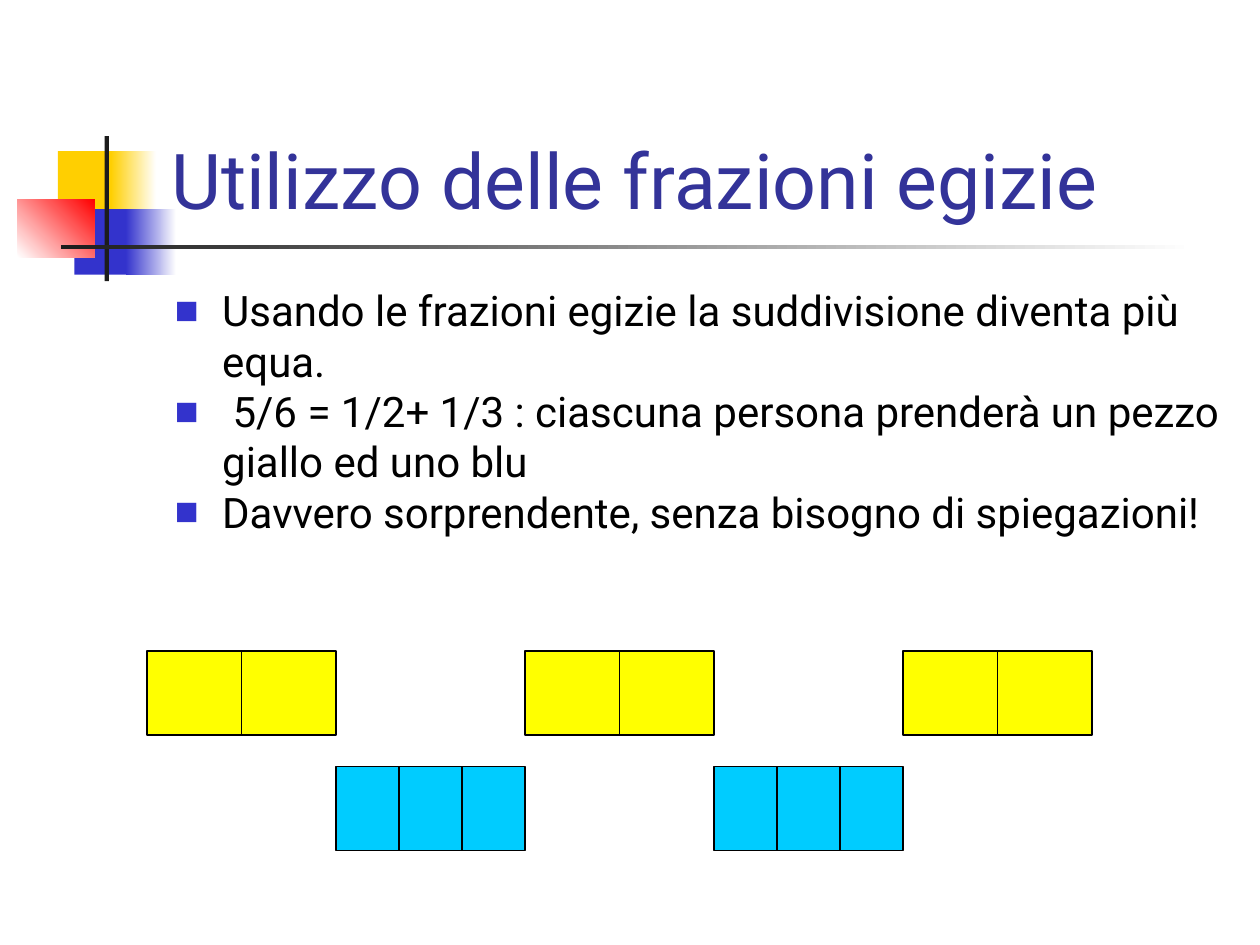
from lxml.etree import SubElement
from pptx import Presentation
from pptx.dml.color import RGBColor
from pptx.enum.shapes import MSO_CONNECTOR, MSO_SHAPE
from pptx.enum.text import MSO_ANCHOR
from pptx.oxml.ns import qn
from pptx.util import Pt

FONT = "Roboto"
COLORS = {
    "gold": "FFCF01", "blue": "3333CC", "red": "FF0000", "dark": "1C1C1C",
    "white": "FFFFFF", "black": "000000", "title": "333399",
    "yellow": "FFFF00", "cyan": "00CCFF",
}
BULLETS = [
    "Usando le frazioni egizie la suddivisione diventa più equa.",
    " 5/6 = 1/2+ 1/3 : ciascuna persona prenderà un pezzo giallo ed uno blu",
    "Davvero sorprendente, senza bisogno di spiegazioni!",
]
# Left, top, width, height, fill colours (two make a gradient), angle
DECORATION = [
    (33.1, 86.4, 34.6, 37.4, ["gold"], 0),
    (63.4, 86.4, 25.9, 37.4, ["gold", "white"], 0),
    (42.5, 119.5, 33.1, 37.4, ["blue"], 0),
    (72, 119.5, 28.8, 37.4, ["blue", "white"], 0),
    (10.1, 113.8, 43.9, 33.1, ["white", "red"], 45),
    (59.8, 77.8, 2.5, 82.8, ["dark"], 0),
    (34.6, 140.1, 648, 2.5, ["dark", "white"], 0),
]
BAR_W, BAR_H = 108, 48


def rgb(name):
    return RGBColor.from_string(COLORS[name])


def add_rect(s, x, y, w, h, fills, angle=0, line=None):
    sp = s.shapes.add_shape(MSO_SHAPE.RECTANGLE, Pt(x), Pt(y), Pt(w), Pt(h))
    sp.shadow.inherit = False
    if len(fills) == 1:
        sp.fill.solid()
        sp.fill.fore_color.rgb = rgb(fills[0])
    else:
        sp.fill.gradient()
        sp.fill.gradient_angle = angle
        for stop, name in zip(sp.fill.gradient_stops, fills):
            stop.color.rgb = rgb(name)
    if line:
        sp.line.color.rgb = rgb(line)
        sp.line.width = Pt(0.75)
    else:
        sp.line.fill.background()
    return sp


def add_text(s, x, y, w, h, lines, size, color, anchor=MSO_ANCHOR.TOP):
    tf = s.shapes.add_textbox(Pt(x), Pt(y), Pt(w), Pt(h)).text_frame
    tf.word_wrap = True
    tf.vertical_anchor = anchor
    tf.text = "\n".join(lines)
    for p in tf.paragraphs:
        font = p.runs[0].font
        font.name, font.size = FONT, Pt(size)
        font.color.rgb = rgb(color)
    return tf


def add_bullet(p):
    pPr = p._p.get_or_add_pPr()
    pPr.set("marL", str(Pt(27)))
    pPr.set("indent", str(-Pt(27)))
    clr = SubElement(pPr, qn("a:buClr"))
    SubElement(clr, qn("a:srgbClr"), val=COLORS["blue"])
    SubElement(pPr, qn("a:buSzPct"), val="60000")
    SubElement(pPr, qn("a:buFont"), typeface=FONT)
    SubElement(pPr, qn("a:buChar"), char="■")


def add_bar(s, x, y, parts, color):
    """Draw a bar cut into equal parts."""
    bar = add_rect(s, x, y, BAR_W, BAR_H, [color], line="black")
    for i in range(1, parts):
        cut = Pt(x + i * BAR_W / parts)
        cx = s.shapes.add_connector(MSO_CONNECTOR.STRAIGHT,
                                    cut, Pt(y), cut, Pt(y + BAR_H))
        if 2 * i == parts:
            cx.begin_connect(bar, 0)
            cx.end_connect(bar, 2)
        cx.line.color.rgb = rgb("black")
        cx.line.width = Pt(0.75)
        SubElement(cx._element.spPr, qn("a:effectLst"))


def main():
    prs = Presentation()
    prs.slide_width, prs.slide_height = Pt(720), Pt(540)
    s = prs.slides.add_slide(prs.slide_layouts[6])

    # Corner decoration and rule
    for item in DECORATION:
        add_rect(s, *item)

    # Title and bullets
    add_text(s, 90.7, 16.6, 613.4, 115.2, ["Utilizzo delle frazioni egizie"],
             44, "title", MSO_ANCHOR.BOTTOM)
    body = add_text(s, 92.9, 159.1, 612, 324, BULLETS, 24, "black")
    for p in body.paragraphs:
        add_bullet(p)

    # Halves above, thirds in the gaps below
    for i in range(3):
        add_bar(s, 84 + i * 2 * BAR_W, 372, 2, "yellow")
    for i in range(2):
        add_bar(s, 192 + i * 2 * BAR_W, 438, 3, "cyan")

    prs.save("out.pptx")


if __name__ == "__main__":
    main()
